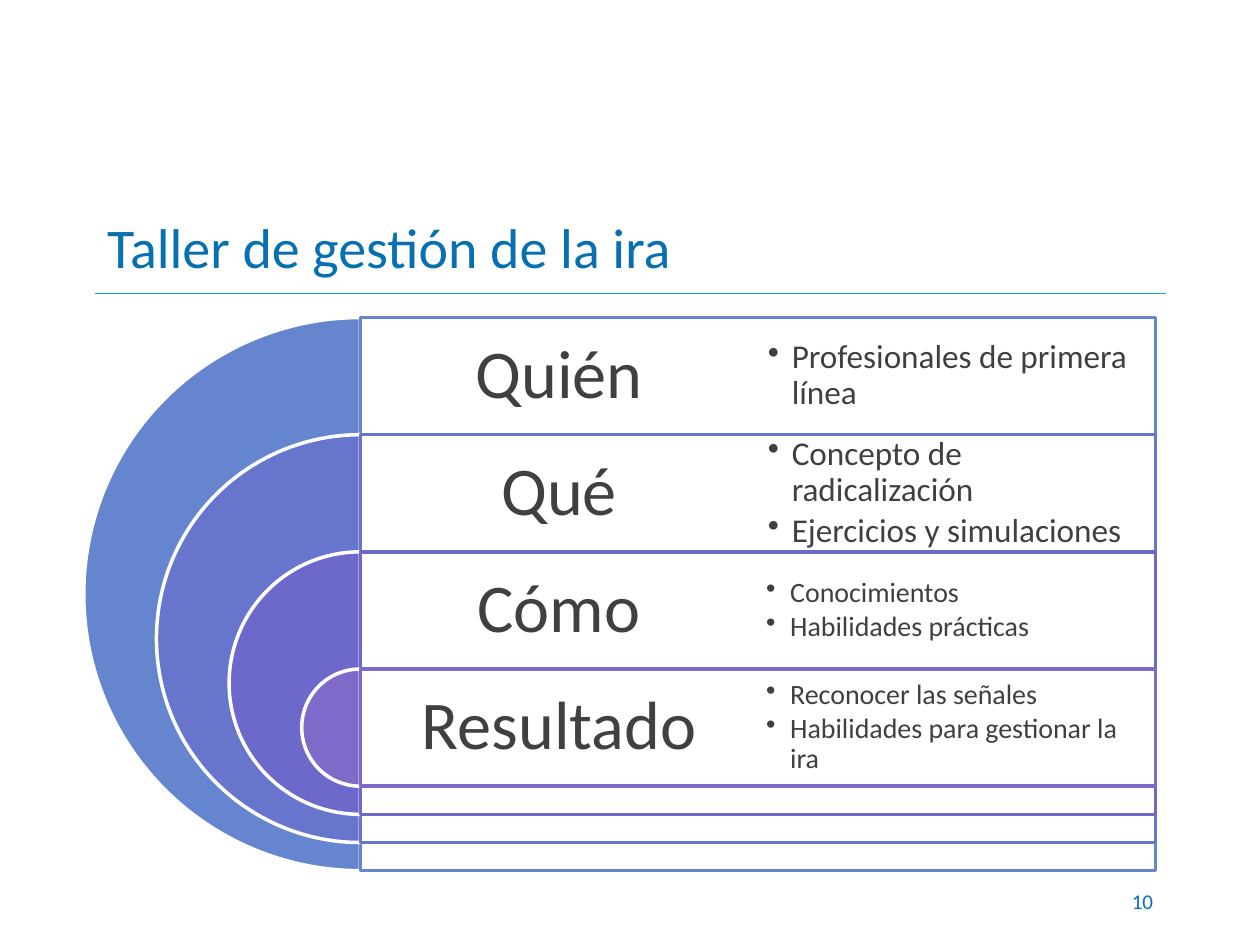
from lxml import etree
from pptx import Presentation, util as u
from pptx.dml.color import RGBColor
from pptx.enum import shapes, text
from pptx.oxml.ns import qn

TITLE = "Taller de gestión de la ira"
PAGE_NUMBER = "10"
ROWS = [
    ("Quién", "6585CF", 19, ["Profesionales de primera línea"]),
    ("Qué", "6775CD", 19, ["Concepto de radicalización", "Ejercicios y simulaciones"]),
    ("Cómo", "6C69CB", 16, ["Conocimientos", "Habilidades prácticas"]),
    ("Resultado", "7E6BC9", 16, ["Reconocer las señales", "Habilidades para gestionar la ira"]),
]
COLORS = {"title": "0770B1", "rule": "0BA7DF", "body": "404040", "white": "FFFFFF"}
FONT = "Calibri"

WIDTH, HEIGHT = 10, 7.5
MARGIN = 0.75
RULE_TOP = 2.33
DIAGRAM_LEFT, DIAGRAM_TOP = 2.86, 2.52
COLUMN, ROW = 3.155, 0.93
OUTER = 4.39
RING_STEP = (OUTER - ROW) / (len(ROWS) - 1)
HANGING = 0.19


def rgb(name):
    return RGBColor.from_string(COLORS.get(name, name))


def inches(*lengths):
    return [u.Inches(length) for length in lengths]


def style_text(paragraph, size, color, alignment=text.PP_ALIGN.LEFT):
    paragraph.alignment = alignment
    for run in paragraph.runs:
        run.font.name = FONT
        run.font.size = u.Pt(size)
        run.font.color.rgb = rgb(color)


def set_frame(frame, inset):
    frame.word_wrap = True
    frame.vertical_anchor = text.MSO_ANCHOR.MIDDLE
    frame.margin_left = frame.margin_right = u.Inches(inset)
    frame.margin_top = frame.margin_bottom = u.Inches(inset)


def add_text(slide, box, lines, size, color, inset, alignment):
    frame = slide.shapes.add_textbox(*inches(*box)).text_frame
    set_frame(frame, inset)
    frame.text = "\n".join(lines)
    for paragraph in frame.paragraphs:
        style_text(paragraph, size, color, alignment)
    return frame


def add_bullets(frame, size):
    for paragraph in frame.paragraphs:
        paragraph.level = 1
        properties = paragraph._p.get_or_add_pPr()
        properties.set("marL", str(u.Inches(HANGING)))
        properties.set("indent", str(-u.Inches(HANGING)))
        etree.SubElement(properties, qn("a:buChar")).set("char", "•")
        paragraph.line_spacing = 0.9
        paragraph.space_after = u.Pt(0.15 * size)


def add_figure(slide, kind, box, fill, line):
    shape = slide.shapes.add_shape(kind, *inches(*box))
    shape.shadow.inherit = False
    shape.fill.solid()
    shape.fill.fore_color.rgb = rgb(fill)
    shape.line.color.rgb = rgb(line)
    shape.line.width = u.Pt(2)
    return shape


def add_ring(slide, index, heading, color, size, bullets):
    top = DIAGRAM_TOP + index * ROW
    diameter = OUTER - index * RING_STEP
    pie = add_figure(slide, shapes.MSO_SHAPE.PIE,
                     (DIAGRAM_LEFT - diameter / 2, top, diameter, diameter), color, "white")
    pie.adjustments[0], pie.adjustments[1] = 54, 162
    panel = add_figure(slide, shapes.MSO_SHAPE.RECTANGLE,
                       (DIAGRAM_LEFT, top, 2 * COLUMN, diameter), "white", color)
    fill_color = panel.fill._xPr.find(qn("a:solidFill"))[0]
    etree.SubElement(fill_color, qn("a:alpha")).set("val", "90000")
    label = add_text(slide, (DIAGRAM_LEFT, top, COLUMN, ROW), [heading], 39, "body", 0.16,
                     text.PP_ALIGN.CENTER)
    label.paragraphs[0].line_spacing = 0.9
    details = add_text(slide, (DIAGRAM_LEFT + COLUMN, top, COLUMN, ROW), bullets, size, "body",
                       size / 240, text.PP_ALIGN.LEFT)
    add_bullets(details, size)


def add_title(slide):
    title = slide.shapes.title
    title.left, title.top, title.width, title.height = inches(
        MARGIN, RULE_TOP - 0.75, WIDTH - 2 * MARGIN, 0.75)
    title.text_frame.text = TITLE
    title.text_frame.vertical_anchor = text.MSO_ANCHOR.MIDDLE
    style_text(title.text_frame.paragraphs[0], 32, "title")


def add_rule(slide):
    rule = slide.shapes.add_connector(
        shapes.MSO_CONNECTOR.STRAIGHT, *inches(MARGIN, RULE_TOP, WIDTH - MARGIN, RULE_TOP))
    rule.line.color.rgb = rgb("rule")
    rule.line.width = u.Pt(0.75)
    etree.SubElement(rule._element.spPr, qn("a:effectLst"))


def main():
    presentation = Presentation()
    presentation.slide_width, presentation.slide_height = inches(WIDTH, HEIGHT)
    slide = presentation.slides.add_slide(presentation.slide_layouts[5])
    add_rule(slide)
    for index, row in enumerate(ROWS):
        add_ring(slide, index, *row)
    add_title(slide)
    add_text(slide, (WIDTH - MARGIN - 2.08, 6.95, 2.08, 0.4), [PAGE_NUMBER], 12, "title", 0.1,
             text.PP_ALIGN.RIGHT)
    presentation.save("out.pptx")


if __name__ == "__main__":
    main()
